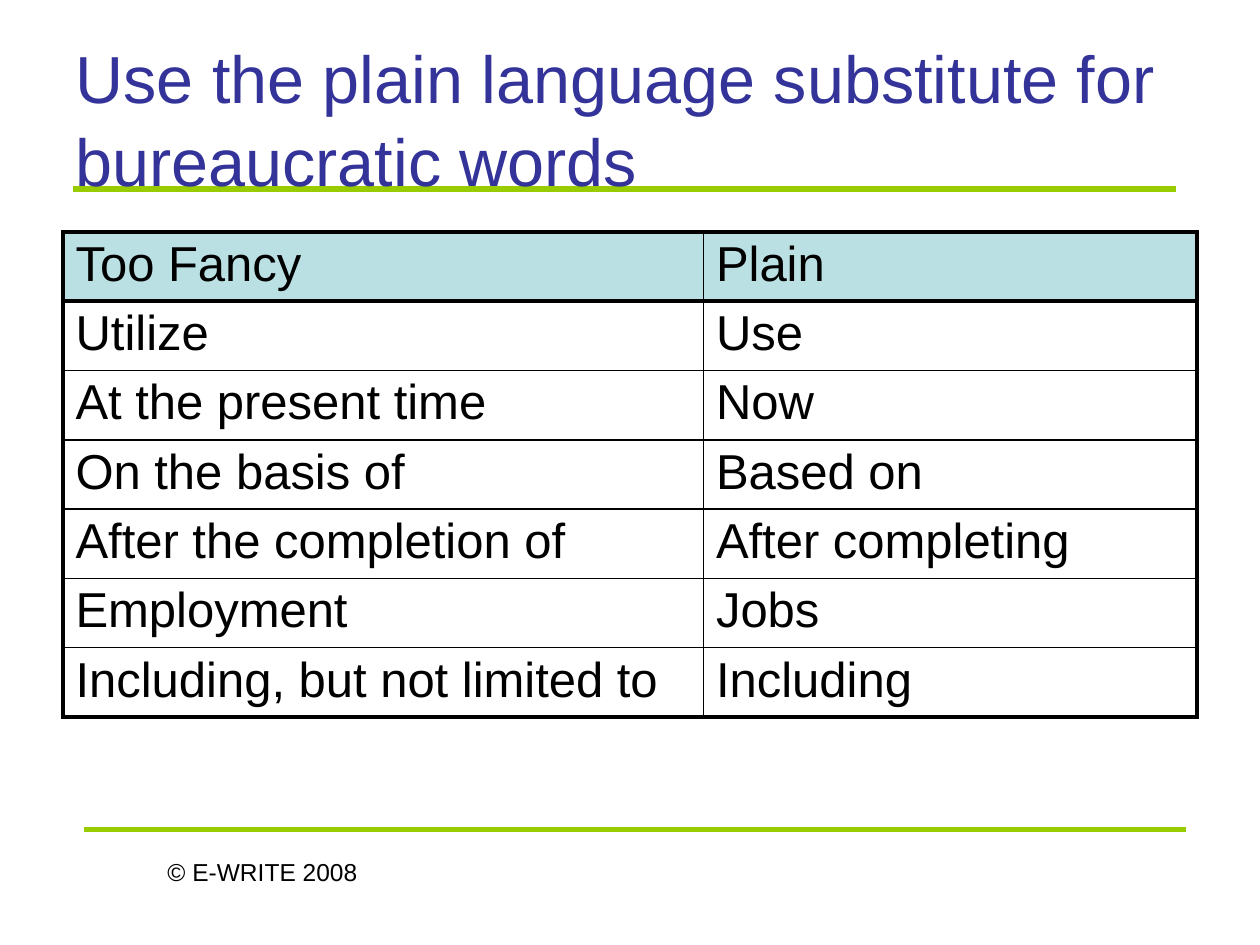
from typing import NamedTuple

from lxml import etree
from pptx import Presentation
from pptx.dml.color import RGBColor
from pptx.enum import shapes, text
from pptx.oxml import ns
from pptx.util import Pt

INK = RGBColor(0x00, 0x00, 0x00)
NAVY = RGBColor(0x33, 0x33, 0x99)
LIME = RGBColor(0x99, 0xCC, 0x00)
TEAL = RGBColor(0xBB, 0xE0, 0xE3)
FONT = "Arial"
THIN, THICK = 1, 2.25
ROW = 38.4


class Rule(NamedTuple):
    left: float
    top: float
    width: float


class Pair(NamedTuple):
    fancy: str
    plain: str


RULES = [Rule(42, 108, 630), Rule(48, 474, 630)]
PAIRS = [
    Pair("Too Fancy", "Plain"),
    Pair("Utilize", "Use"),
    Pair("At the present time", "Now"),
    Pair("On the basis of", "Based on"),
    Pair("After the completion of", "After completing"),
    Pair("Employment", "Jobs"),
    Pair("Including, but not limited to", "Including"),
]


def write(frame, words: str, *, size: float, color=INK,
          align=text.PP_ALIGN.LEFT, pitch=None) -> None:
    frame.word_wrap = True
    para = frame.paragraphs[0]
    para.alignment = align
    if pitch:
        para.line_spacing = pitch
    run = para.add_run()
    run.text = words
    run.font.name = FONT
    run.font.size = Pt(size)
    run.font.color.rgb = color


def draw_rule(slide, rule: Rule) -> None:
    line = slide.shapes.add_connector(
        shapes.MSO_CONNECTOR.STRAIGHT, Pt(rule.left), Pt(rule.top),
        Pt(rule.left + rule.width), Pt(rule.top))
    line.line.color.rgb = LIME
    line.line.width = Pt(3)
    etree.SubElement(line._element.spPr, ns.qn("a:effectLst"))


def set_edges(cell, widths: dict[str, float]) -> None:
    props = cell._tc.get_or_add_tcPr()
    for spot, (side, width) in enumerate(widths.items()):
        edge = etree.Element(ns.qn(f"a:ln{side}"), w=str(Pt(width)))
        fill = etree.SubElement(edge, ns.qn("a:solidFill"))
        etree.SubElement(fill, ns.qn("a:srgbClr"), val=str(INK))
        props.insert(spot, edge)


def draw_table(slide, pairs: list[Pair]) -> None:
    count = len(pairs)
    table = slide.shapes.add_table(
        count, 2, Pt(36), Pt(132.5), Pt(648), Pt(ROW * count)).table
    table.horz_banding = False
    table.columns[0].width = Pt(366)
    table.columns[1].width = Pt(282)
    for r, pair in enumerate(pairs):
        table.rows[r].height = Pt(ROW)
        for c, words in enumerate(pair):
            cell = table.cell(r, c)
            cell.margin_top = cell.margin_bottom = Pt(3)
            write(cell.text_frame, words, size=28)
            if r == 0:
                cell.fill.solid()
                cell.fill.fore_color.rgb = TEAL
            else:
                cell.fill.background()
            # Thick frame and header line, thin inner grid
            set_edges(cell, {
                "L": THICK if c == 0 else THIN,
                "R": THICK if c == 1 else THIN,
                "T": THICK if r < 2 else THIN,
                "B": THICK if r in (0, count - 1) else THIN,
            })


def main() -> None:
    deck = Presentation()
    deck.slide_width, deck.slide_height = Pt(720), Pt(540)
    slide = deck.slides.add_slide(deck.slide_layouts[6])

    # Green rules
    for rule in RULES:
        draw_rule(slide, rule)

    # Footer
    foot = slide.shapes.add_textbox(Pt(36), Pt(486), Pt(228), Pt(37.5))
    write(foot.text_frame, "© E-WRITE 2008", size=14,
          align=text.PP_ALIGN.CENTER)

    # Title
    title = slide.shapes.add_textbox(Pt(36), Pt(21.5), Pt(648), Pt(90))
    title.text_frame.vertical_anchor = text.MSO_ANCHOR.MIDDLE
    write(title.text_frame,
          "Use the plain language substitute for bureaucratic words",
          size=38, color=NAVY, pitch=1.05)

    # Word pairs
    draw_table(slide, PAIRS)
    deck.save("out.pptx")


if __name__ == "__main__":
    main()
